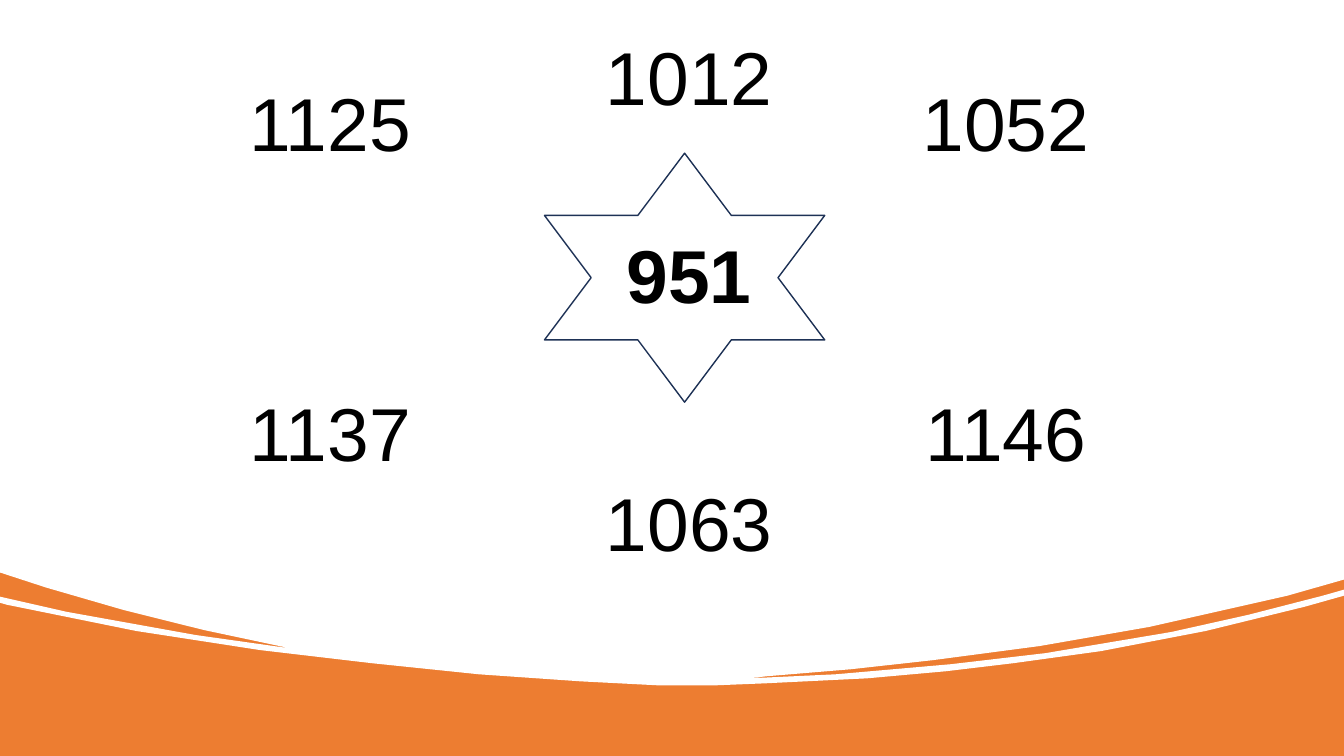
from pptx import Presentation
from pptx.dml.color import RGBColor
from pptx.enum.shapes import MSO_SHAPE as Shape
from pptx.enum.text import MSO_AUTO_SIZE as Fit, PP_ALIGN as Align
from pptx.util import Pt

PX = 9144  # EMU in one px, 100 px to the inch
WIDE, HIGH = 1333, 750
BOX_W, BOX_H = 189, 100
LEFT, MID, RIGHT = 233, 589, 903

ORANGE = RGBColor(0xED, 0x7D, 0x31)
WHITE = RGBColor(0xFF, 0xFF, 0xFF)
BLACK = RGBColor(0, 0, 0)
NAVY = RGBColor(0x1E, 0x32, 0x56)

NUMBERS = [
    ("1125", LEFT, 71, False),
    ("1137", LEFT, 379, False),
    ("1052", RIGHT, 71, False),
    ("1146", RIGHT, 379, False),
    ("1063", MID, 468, False),
    ("951", MID, 222, True),
    ("1012", MID, 25, False),
]

WAVE = [
    (0, 0), (WIDE, 0),
    # right stripe: upper edge, then back along the lower edge
    (WIDE, 575), (1277, 591), (1140, 622), (1031, 641), (925, 655),
    (844, 664), (760, 671), (743, 673),
    (829, 669), (943, 659), (1037, 648), (1162, 627), (1238, 610),
    (1312, 591), (WIDE, 585),
    # top of the large field, from right to left
    (WIDE, 591), (1294, 602), (1196, 626), (1092, 646), (1005, 658),
    (938, 666), (860, 673), (758, 678), (708, 680), (654, 680),
    (576, 676), (475, 669), (369, 658), (258, 645), (135, 626),
    (7, 600), (0, 598),
    # left stripe
    (0, 592), (66, 607), (194, 630), (286, 643), (282, 642),
    (202, 625), (122, 605), (46, 583), (0, 568),
]


def paint(shape, color):
    shape.shadow.inherit = False
    shape.fill.solid()
    shape.fill.fore_color.rgb = color
    shape.line.fill.background()


def add_field(slide):
    field = slide.shapes.add_shape(Shape.RECTANGLE, 0, 0, WIDE * PX, HIGH * PX)
    paint(field, ORANGE)


def add_wave(slide):
    pen = slide.shapes.build_freeform(*WAVE[0], scale=PX)
    pen.add_line_segments(WAVE[1:], close=True)
    paint(pen.convert_to_shape(), WHITE)


def add_number(slide, text, x, y, bold):
    box = slide.shapes.add_textbox(x * PX, y * PX, BOX_W * PX, BOX_H * PX)
    frame = box.text_frame
    frame.word_wrap = True
    frame.auto_size = Fit.SHAPE_TO_FIT_TEXT
    frame.text = text
    para = frame.paragraphs[0]
    para.alignment = Align.CENTER
    para.space_after = Pt(6)
    font = para.runs[0].font
    font.name, font.size, font.bold = "Arial", Pt(53.5), bold
    font.color.rgb = BLACK


def add_star(slide, x, y, w, h):
    star = slide.shapes.add_shape(Shape.STAR_6_POINT,
                                  x * PX, y * PX, w * PX, h * PX)
    star.shadow.inherit = False
    star.fill.background()
    star.line.color.rgb = NAVY
    star.line.width = Pt(1)


def main():
    deck = Presentation()
    deck.slide_width, deck.slide_height = WIDE * PX, HIGH * PX
    slide = deck.slides.add_slide(deck.slide_layouts[6])
    add_field(slide)
    add_wave(slide)
    for text, x, y, bold in NUMBERS:
        add_number(slide, text, x, y, bold)
    add_star(slide, 540, 152, 278, 247)
    deck.save("out.pptx")


if __name__ == "__main__":
    main()
